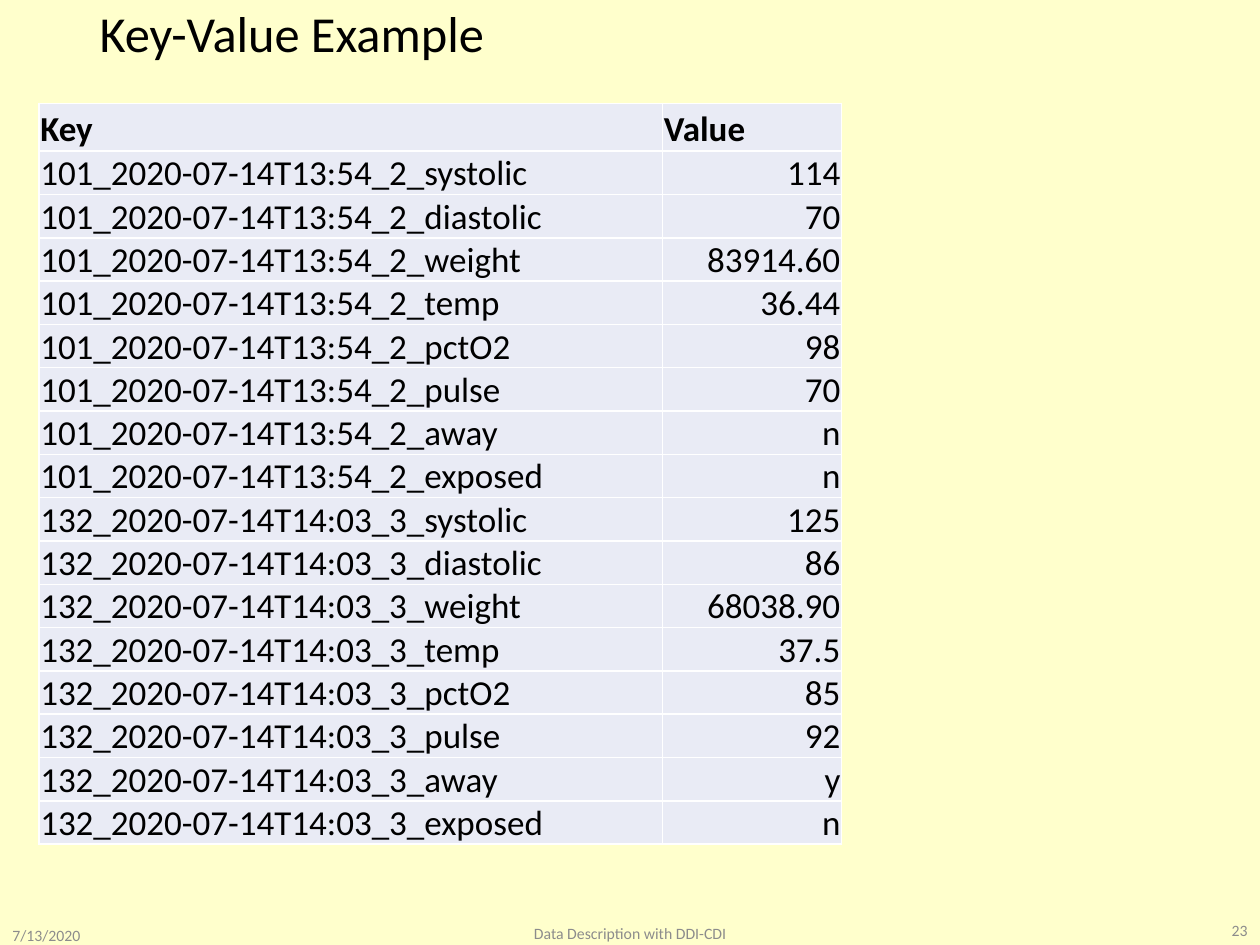
import lxml.etree
import pptx
import pptx.dml.color
import pptx.enum.text
import pptx.oxml.ns
import pptx.util

Inches = pptx.util.Inches
Pt = pptx.util.Pt
Align = pptx.enum.text.PP_ALIGN
Anchor = pptx.enum.text.MSO_ANCHOR

TITLE = "Key-Value Example"
HEADER = ("Key", "Value")
MEASURES = ("systolic", "diastolic", "weight", "temp", "pctO2", "pulse", "away", "exposed")
READINGS = {
    "101_2020-07-14T13:54_2": ("114", "70", "83914.60", "36.44", "98", "70", "n", "n"),
    "132_2020-07-14T14:03_3": ("125", "86", "68038.90", "37.5", "85", "92", "y", "n"),
}
# text, left, top, width, alignment
FOOTERS = (
    ("7/13/2020", 0, 7.35, 1.17, Align.LEFT),
    ("Data Description with DDI-CDI", 3.31, 7.33, 3.38, Align.CENTER),
    ("23", 9.11, 7.31, 0.89, Align.RIGHT),
)
THEME = {
    "font": "Calibri",
    "background": "FFFFCC", "text": "000000", "muted": "8C8C8C",
    "cell": "E9EBF5", "border": "FFFFFF",
    "title_size": 28.8, "table_size": 20, "footer_size": 9,
}
COLUMN_WIDTHS = (4.95, 1.42)
HEADER_HEIGHT, ROW_HEIGHT = 0.38, 0.34


def rgb(role):
    return pptx.dml.color.RGBColor.from_string(THEME[role])


def write(frame, text, size, color, align=Align.LEFT, bold=False):
    frame.text = text
    paragraph = frame.paragraphs[0]
    paragraph.alignment = align
    font = paragraph.font
    font.name, font.size, font.bold = THEME["font"], Pt(THEME[size]), bold
    font.color.rgb = rgb(color)
    return paragraph


def add_borders(cell):
    properties = cell._tc.get_or_add_tcPr()
    qn = pptx.oxml.ns.qn
    for position, side in enumerate(("a:lnL", "a:lnR", "a:lnT", "a:lnB")):
        line = lxml.etree.Element(qn(side), w=str(Pt(1)))
        fill = lxml.etree.SubElement(line, qn("a:solidFill"))
        lxml.etree.SubElement(fill, qn("a:srgbClr"), val=THEME["border"])
        properties.insert(position, line)


def add_title(slide):
    title = slide.shapes.title
    title.left, title.top, title.width, title.height = map(Inches, (0.69, 0.04, 8.62, 0.49))
    title.text_frame.vertical_anchor = Anchor.MIDDLE
    write(title.text_frame, TITLE, "title_size", "text").line_spacing = 0.9


def add_key_values(slide):
    rows = [HEADER] + [
        (f"{visit}_{measure}", value)
        for visit, values in READINGS.items()
        for measure, value in zip(MEASURES, values)
    ]
    height = HEADER_HEIGHT + ROW_HEIGHT * (len(rows) - 1)
    table = slide.shapes.add_table(
        len(rows), len(HEADER), Inches(0.31), Inches(0.82),
        Inches(sum(COLUMN_WIDTHS)), Inches(height)).table
    table.horz_banding = False
    for column, width in zip(table.columns, COLUMN_WIDTHS):
        column.width = Inches(width)
    for r, row in enumerate(rows):
        is_header = r == 0
        table.rows[r].height = Inches(HEADER_HEIGHT if is_header else ROW_HEIGHT)
        for c, text in enumerate(row):
            cell = table.cell(r, c)
            cell.margin_left = cell.margin_right = cell.margin_top = Inches(0.01)
            cell.margin_bottom = 0
            cell.vertical_anchor = Anchor.BOTTOM
            cell.fill.solid()
            cell.fill.fore_color.rgb = rgb("cell")
            add_borders(cell)
            align = Align.RIGHT if c == 1 and not is_header else Align.LEFT
            write(cell.text_frame, text, "table_size", "text", align, is_header)


def add_footers(slide):
    for text, left, top, width, align in FOOTERS:
        footer = slide.shapes.add_textbox(
            Inches(left), Inches(top), Inches(width), Inches(0.15)).text_frame
        footer.word_wrap = True
        footer.margin_top = footer.margin_bottom = 0
        footer.vertical_anchor = Anchor.MIDDLE
        write(footer, text, "footer_size", "muted", align)


def main():
    deck = pptx.Presentation()
    deck.slide_width, deck.slide_height = Inches(10), Inches(7.5)
    slide = deck.slides.add_slide(deck.slide_layouts[5])
    slide.background.fill.solid()
    slide.background.fill.fore_color.rgb = rgb("background")
    add_title(slide)
    add_footers(slide)
    add_key_values(slide)
    deck.save("out.pptx")


if __name__ == "__main__":
    main()
